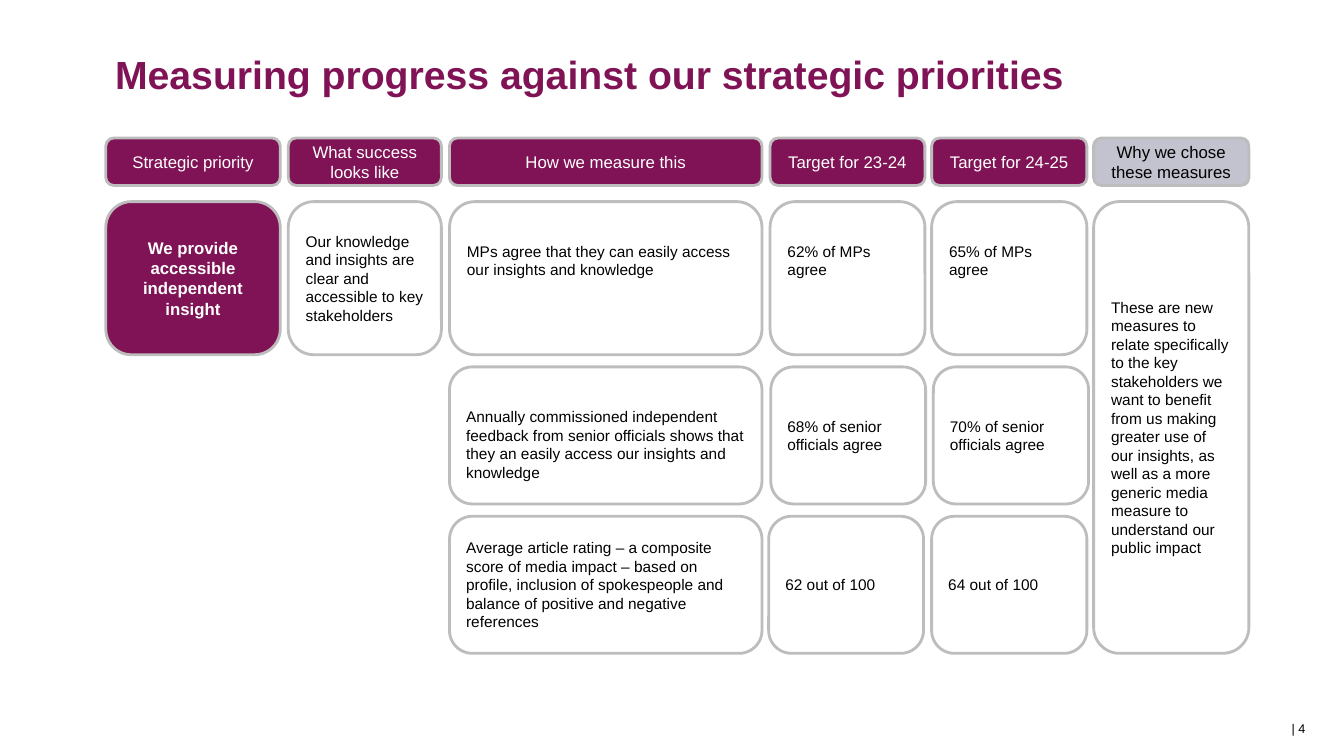
import pptx
import pptx.util
import pptx.dml.color
import pptx.enum.shapes
import pptx.enum.text
from dataclasses import dataclass

Pt = pptx.util.Pt
RGB = pptx.dml.color.RGBColor.from_string
ALIGN = pptx.enum.text.PP_ALIGN
ANCHOR = pptx.enum.text.MSO_ANCHOR


@dataclass(frozen=True)
class Theme:
    font: str = "Arial"
    plum: str = "7F1355"
    lilac: str = "C3C2CF"
    outline: str = "BDBDBD"
    white: str = "FFFFFF"
    black: str = "000000"
    title_size: int = 28
    header_size: int = 12
    body_size: int = 11
    page_size: int = 9
    outline_width: int = 2


THEME = Theme()

TITLE = "Measuring progress against our strategic priorities"
PAGE_NUMBER = "| 4"
HEADERS = [
    "Strategic priority",
    "What success looks like",
    "How we measure this",
    "Target for 23-24",
    "Target for 24-25",
    "Why we chose these measures",
]
PRIORITY = "We provide accessible independent insight"
SUCCESS = "Our knowledge and insights are clear and accessible to key stakeholders"
REASON = (
    "These are new measures to relate specifically to the key stakeholders we "
    "want to benefit from us making greater use of our insights, as well as a "
    "more generic media measure to understand our public impact"
)
# Measure, target for 23-24, target for 24-25
MEASURES = [
    ("MPs agree that they can easily access our insights and knowledge",
     "62% of MPs agree", "65% of MPs agree"),
    ("Annually commissioned independent feedback from senior officials shows "
     "that they an easily access our insights and knowledge",
     "68% of senior officials agree", "70% of senior officials agree"),
    ("Average article rating – a composite score of media impact – based on "
     "profile, inclusion of spokespeople and balance of positive and negative "
     "references",
     "62 out of 100", "64 out of 100"),
]

# Grid in points: (left, width) per column, (top, height) per row
COLUMNS = [(75.6, 124.6), (205.9, 109.4), (321.1, 223.2),
           (550.1, 110.6), (665.5, 110.9), (781.2, 110.9)]
HEADER_ROW = (98.6, 33.9)
ROWS = [(144, 109.4), (262.1, 97.9), (368.8, 97.9)]
MEASURE_COLUMN = 2
INSET = 3.6
LINE = 12.6
# Lines by which text sits above (-) or below (+) the middle, by (row, column)
TEXT_SHIFT = {(0, 2): -2, (0, 3): -2, (0, 4): -2, (1, 2): 1}
SIDE_SHIFT = {(1, 3): 0.5, (1, 4): 1.2, (2, 3): -1}


def style(paragraph, size, color, align, bold=False):
    paragraph.alignment = align
    paragraph.font.name = THEME.font
    paragraph.font.size = Pt(size)
    paragraph.font.bold = bold
    paragraph.font.color.rgb = RGB(color)


def add_card(slide, text, column, row, fill=None, color=THEME.black,
             size=THEME.body_size, align=ALIGN.LEFT, bold=False,
             text_shift=0, side_shift=0):
    """Add a rounded card; text_shift counts lines, side_shift points."""
    left, width = column
    top, height = row
    card = slide.shapes.add_shape(
        pptx.enum.shapes.MSO_SHAPE.ROUNDED_RECTANGLE,
        Pt(left + side_shift), Pt(top), Pt(width), Pt(height))
    card.shadow.inherit = False
    if fill:
        card.fill.solid()
        card.fill.fore_color.rgb = RGB(fill)
    else:
        card.fill.background()
    card.line.color.rgb = RGB(THEME.outline)
    card.line.width = Pt(THEME.outline_width)
    # Keep the corners of the tall card as round as those of the square ones
    frame = card.text_frame
    frame.word_wrap = True
    frame.vertical_anchor = ANCHOR.MIDDLE
    frame.margin_top = Pt(INSET + LINE * max(text_shift, 0))
    frame.margin_bottom = Pt(INSET + LINE * max(-text_shift, 0))
    frame.text = text
    style(frame.paragraphs[0], size, color, align, bold)


def add_title(slide):
    title = slide.shapes.title
    title.left, title.top = Pt(2.2), Pt(20.2)
    title.width, title.height = Pt(837.4), Pt(65.5)
    title.text_frame.text = TITLE
    title.text_frame.word_wrap = True
    title.text_frame.vertical_anchor = ANCHOR.MIDDLE
    style(title.text_frame.paragraphs[0], THEME.title_size, THEME.plum,
          ALIGN.CENTER, bold=True)


def add_page_number(slide):
    number = slide.shapes.add_textbox(Pt(894.2), Pt(511.2), Pt(45.4), Pt(18))
    number.text_frame.word_wrap = True
    number.text_frame.text = PAGE_NUMBER
    style(number.text_frame.paragraphs[0], THEME.page_size, THEME.black,
          ALIGN.RIGHT)


def main():
    deck = pptx.Presentation()
    deck.slide_width, deck.slide_height = Pt(960), Pt(540)
    slide = deck.slides.add_slide(deck.slide_layouts.get_by_name("Title Only"))
    add_title(slide)

    for header, column in zip(HEADERS, COLUMNS):
        last = column == COLUMNS[-1]
        add_card(slide, header, column, HEADER_ROW,
                 fill=THEME.lilac if last else THEME.plum,
                 color=THEME.black if last else THEME.white,
                 size=THEME.header_size, align=ALIGN.CENTER)

    add_card(slide, PRIORITY, COLUMNS[0], ROWS[0], fill=THEME.plum,
             color=THEME.white, size=THEME.header_size, align=ALIGN.CENTER,
             bold=True)
    add_card(slide, SUCCESS, COLUMNS[1], ROWS[0])

    for r, measure in enumerate(MEASURES):
        for c, text in enumerate(measure, start=MEASURE_COLUMN):
            add_card(slide, text, COLUMNS[c], ROWS[r],
                     text_shift=TEXT_SHIFT.get((r, c), 0),
                     side_shift=SIDE_SHIFT.get((r, c), 0))

    top, bottom = ROWS[0][0], sum(ROWS[-1])
    add_card(slide, REASON, COLUMNS[-1], (top, bottom - top))
    add_page_number(slide)
    deck.save("out.pptx")


if __name__ == "__main__":
    main()
